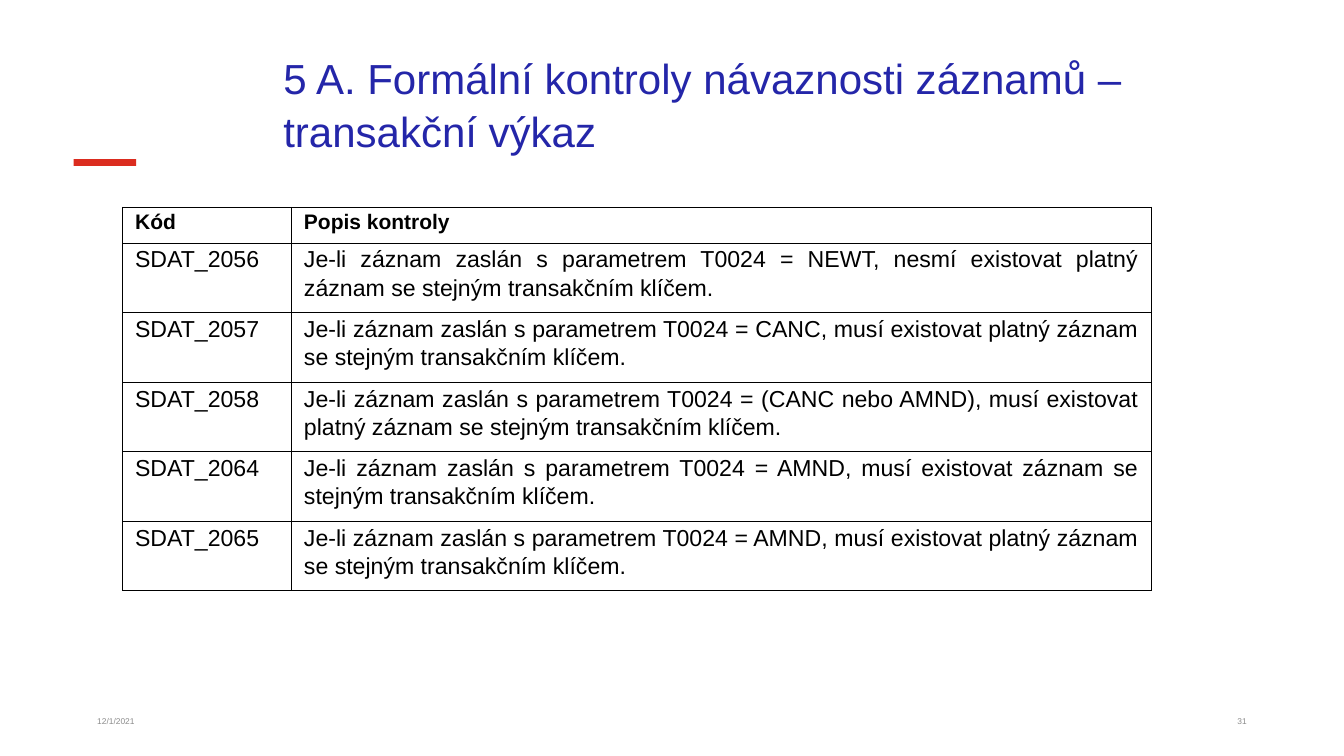
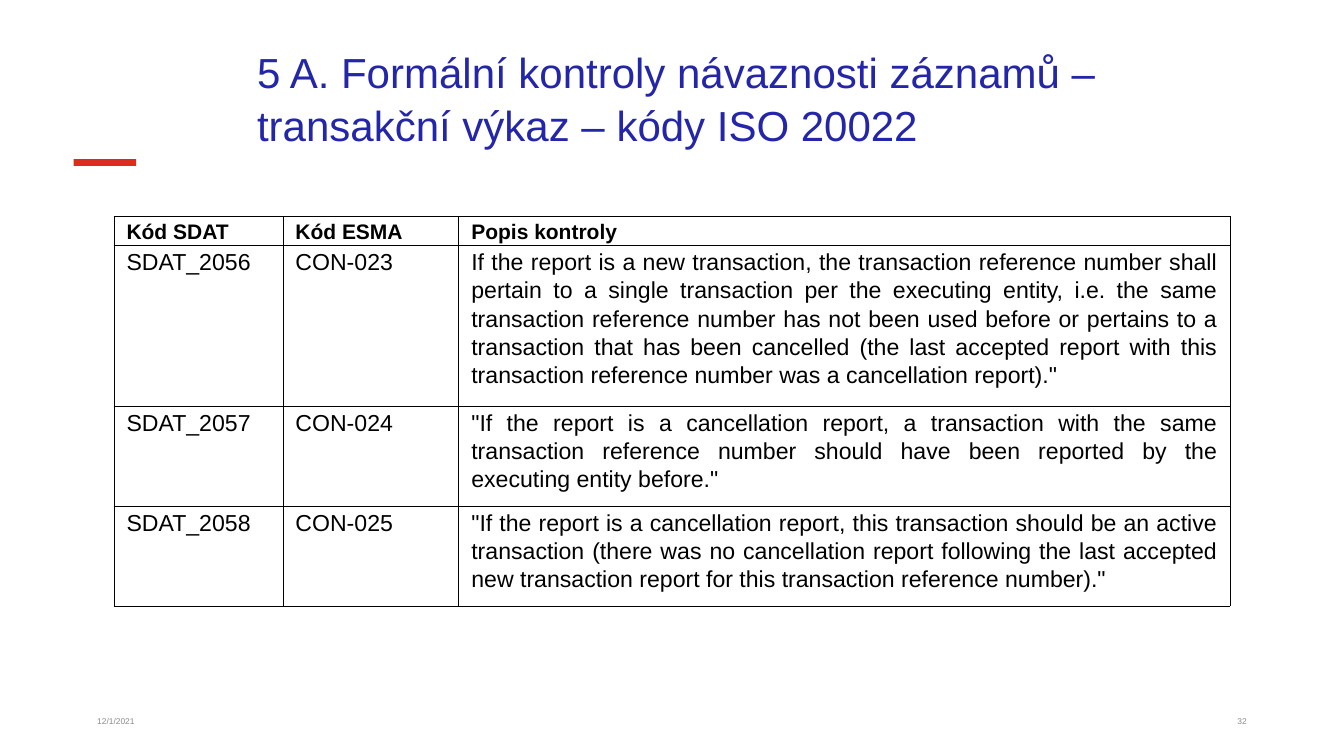
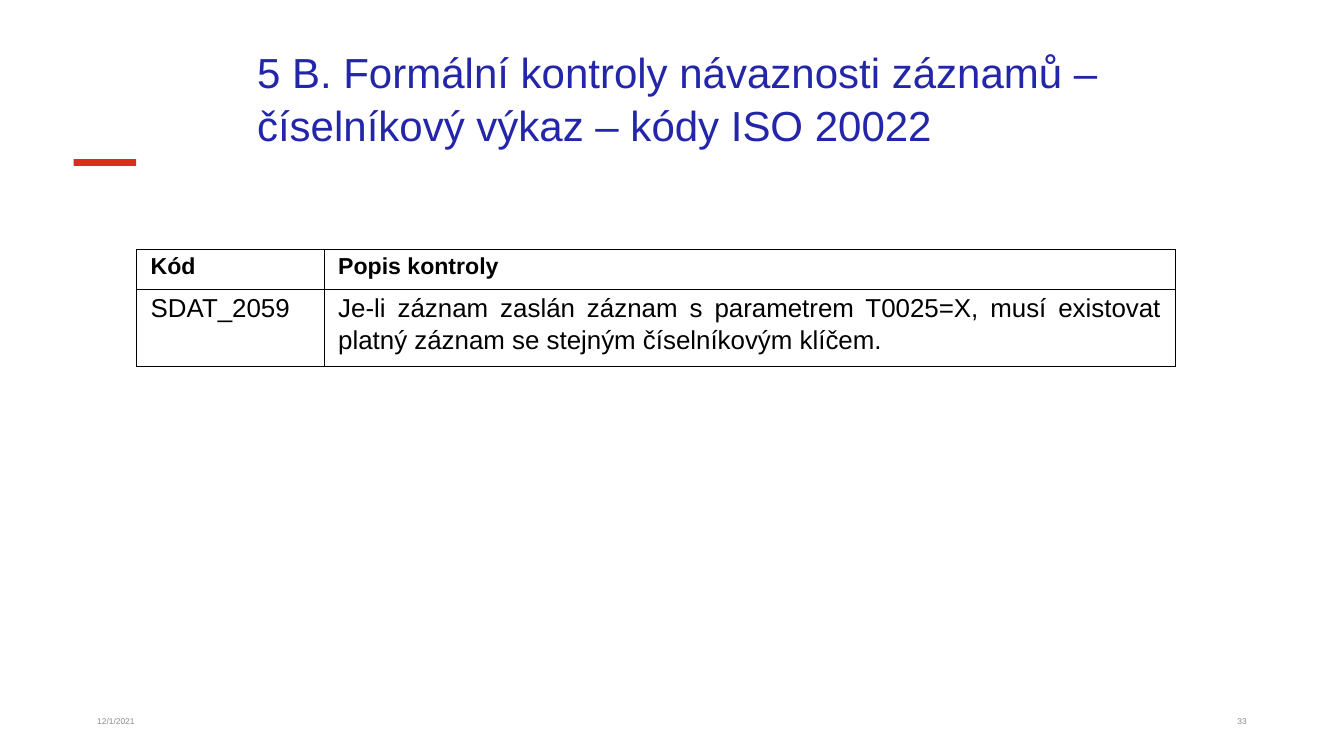
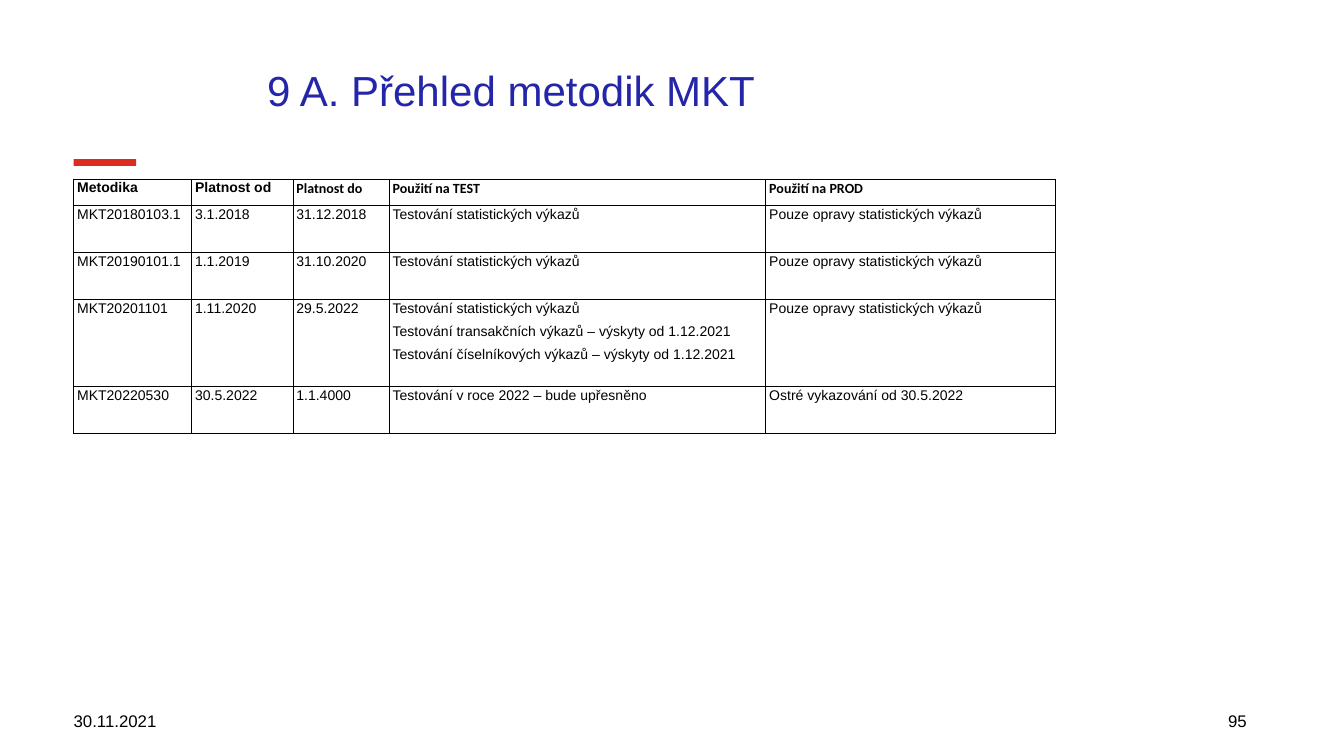
from lxml.etree import SubElement
from pptx import Presentation
from pptx.dml.color import RGBColor
from pptx.enum.shapes import MSO_SHAPE
from pptx.enum.text import MSO_ANCHOR, PP_ALIGN
from pptx.oxml.ns import qn
from pptx.util import Inches, Pt

# Shared style
SLIDE_WIDTH, SLIDE_HEIGHT = 26.66, 15
BLUE, RED, GRAY, BLACK = "2426A9", "DB2C1F", "8C8C8C", "000000"
FONT = "Arial"
TITLE_SIZE, TITLE_WIDTH, TITLE_HEIGHT = 60, 21.04, 2.02
ACCENT_BAR = (1.46, 3.16, 1.24, 0.13)
FOOTER_TOP, FOOTER_WIDTH, FOOTER_HEIGHT = 13.9, 6, 0.8
NUMBER_LEFT = 18.83
DEFAULT_MARGINS = (0.1, 0.05, 0.1, 0.05)
NO_MARGINS = (0, 0, 0, 0)

# Footer styles: left edge of the date, its margins, text size, colour, space after
SMALL_FOOTER = dict(left=1.83, margins=DEFAULT_MARGINS, size=12, color=GRAY, after=6)
LARGE_FOOTER = dict(left=1.46, margins=NO_MARGINS, size=24, color=BLACK, after=0)

# Table styles: text sizes, cell margins, header alignment, spacing and fonts
CODE_TABLE = dict(header_size=30, body_size=33, margins=(0.25, 0.03, 0.25, 0),
                  header_align=PP_ALIGN.JUSTIFY, header_spacing=1.1, header_fonts=[FONT] * 3)
LARGE_CODE_TABLE = CODE_TABLE | dict(header_size=33, body_size=37,
                                     margins=(0.28, 0.04, 0.28, 0))
METHOD_TABLE = dict(header_size=20, body_size=20, margins=(0.07, 0, 0.07, 0),
                    header_align=PP_ALIGN.LEFT, header_spacing=1.07,
                    header_fonts=[FONT] * 2 + ["Calibri"] * 3)

# Content: a list inside a row is a cell with several paragraphs
CORRECTIONS = "Pouze opravy statistických výkazů"
STATISTICS = "Testování statistických výkazů"

PAGES = [
    dict(
        title=["5 A. Formální kontroly návaznosti záznamů –", "transakční výkaz"],
        title_at=(5.62, 0.99), date="12/1/2021", number=31, footer=SMALL_FOOTER,
        style=CODE_TABLE, table_at=(2.43, 4.11),
        columns=[3.35, 17.05], heights=[0.71] + [1.38] * 5,
        rows=[
            ["Kód", "Popis kontroly"],
            ["SDAT_2056", "Je-li záznam zaslán s parametrem T0024 = NEWT, nesmí existovat "
                          "platný záznam se stejným transakčním klíčem."],
            ["SDAT_2057", "Je-li záznam zaslán s parametrem T0024 = CANC, musí existovat "
                          "platný záznam se stejným transakčním klíčem."],
            ["SDAT_2058", "Je-li záznam zaslán s parametrem T0024 = (CANC nebo AMND), musí "
                          "existovat platný záznam se stejným transakčním klíčem."],
            ["SDAT_2064", "Je-li záznam zaslán s parametrem T0024 = AMND, musí existovat "
                          "záznam se stejným transakčním klíčem."],
            ["SDAT_2065", "Je-li záznam zaslán s parametrem T0024 = AMND, musí existovat "
                          "platný záznam se stejným transakčním klíčem."],
        ],
    ),
    dict(
        title=["5 A. Formální kontroly návaznosti záznamů –",
               "transakční výkaz – kódy ISO 20022"],
        title_at=(5.1, 0.87), date="12/1/2021", number=32, footer=SMALL_FOOTER,
        style=CODE_TABLE, table_at=(2.26, 4.29),
        columns=[3.35, 3.49, 15.3], heights=[0.56, 3.19, 1.98, 1.98],
        rows=[
            ["Kód SDAT", "Kód ESMA", "Popis kontroly"],
            ["SDAT_2056", "CON-023",
             "If the report is a new transaction, the transaction reference number shall "
             "pertain to a single transaction per the executing entity, i.e. the same "
             "transaction reference number has not been used before or pertains to a "
             "transaction that has been cancelled (the last accepted report with this "
             'transaction reference number was a cancellation report)."'],
            ["SDAT_2057", "CON-024",
             '"If the report is a cancellation report, a transaction with the same '
             "transaction reference number should have been reported by the executing "
             'entity before."'],
            ["SDAT_2058", "CON-025",
             '"If the report is a cancellation report, this transaction should be an active '
             "transaction (there was no cancellation report following the last accepted "
             'new transaction report for this transaction reference number)."'],
        ],
    ),
    dict(
        title=["5 B. Formální kontroly návaznosti záznamů –",
               "číselníkový výkaz – kódy ISO 20022"],
        title_at=(5.1, 0.87), date="12/1/2021", number=33, footer=SMALL_FOOTER,
        style=LARGE_CODE_TABLE, table_at=(2.71, 4.95),
        columns=[3.72, 16.88], heights=[0.79, 1.53],
        rows=[
            ["Kód", "Popis kontroly"],
            ["SDAT_2059", "Je-li záznam zaslán záznam s parametrem T0025=X, musí existovat "
                          "platný záznam se stejným číselníkovým klíčem."],
        ],
    ),
    dict(
        title=["9 A. Přehled metodik MKT"],
        title_at=(5.3, 1.23), date="30.11.2021", number=95, footer=LARGE_FOOTER,
        style=METHOD_TABLE, table_at=(1.46, 3.55),
        columns=[2.34, 2.01, 1.91, 7.47, 5.75], heights=[0.53, 0.93, 0.93, 1.72, 0.93],
        rows=[
            ["Metodika", "Platnost od", "Platnost do", "Použití na TEST", "Použití na PROD"],
            ["MKT20180103.1", "3.1.2018", "31.12.2018", STATISTICS, CORRECTIONS],
            ["MKT20190101.1", "1.1.2019", "31.10.2020", STATISTICS, CORRECTIONS],
            ["MKT20201101", "1.11.2020", "29.5.2022",
             [STATISTICS,
              "Testování transakčních výkazů – výskyty od 1.12.2021",
              "Testování číselníkových výkazů – výskyty od 1.12.2021"],
             CORRECTIONS],
            ["MKT20220530", "30.5.2022", "1.1.4000",
             "Testování v roce 2022 – bude upřesněno", "Ostré vykazování od 30.5.2022"],
        ],
    ),
]


# Helpers
def rgb(hex_color):
    return RGBColor.from_string(hex_color)


def set_margins(target, margins):
    """Set left, top, right and bottom margins of a text frame or a cell."""
    for side, margin in zip(("left", "top", "right", "bottom"), margins):
        setattr(target, f"margin_{side}", Inches(margin))


def style_paragraph(paragraph, size, color=BLACK, font=FONT, bold=False,
                    align=PP_ALIGN.LEFT, spacing=1.0, after=0):
    paragraph.alignment = align
    paragraph.line_spacing = spacing
    paragraph.space_after = Pt(after)
    paragraph.font.size = Pt(size)
    paragraph.font.name = font
    paragraph.font.bold = bold
    paragraph.font.color.rgb = rgb(color)


def add_text(slide, box, text, margins, anchor, **style):
    frame = slide.shapes.add_textbox(*map(Inches, box)).text_frame
    frame.word_wrap = True
    frame.vertical_anchor = anchor
    set_margins(frame, margins)
    paragraph = frame.paragraphs[0]
    paragraph.text = text
    style_paragraph(paragraph, **style)


def add_borders(cell):
    properties = cell._tc.get_or_add_tcPr()
    for position, side in enumerate(("a:lnL", "a:lnR", "a:lnT", "a:lnB")):
        line = SubElement(properties, qn(side), w=str(Pt(1)))
        fill = SubElement(line, qn("a:solidFill"))
        SubElement(fill, qn("a:srgbClr"), val=BLACK)
        properties.insert(position, line)


# Slide parts
def add_title(slide, page):
    add_text(slide, (*page["title_at"], TITLE_WIDTH, TITLE_HEIGHT), "\v".join(page["title"]),
             NO_MARGINS, MSO_ANCHOR.TOP, size=TITLE_SIZE, color=BLUE, spacing=1.05)


def add_accent_bar(slide):
    bar = slide.shapes.add_shape(MSO_SHAPE.RECTANGLE, *map(Inches, ACCENT_BAR))
    bar.shadow.inherit = False
    bar.fill.solid()
    bar.fill.fore_color.rgb = rgb(RED)
    bar.line.fill.background()


def add_footer(slide, page):
    footer = page["footer"]
    parts = [(footer["left"], page["date"], footer["margins"], PP_ALIGN.LEFT),
             (NUMBER_LEFT, str(page["number"]), DEFAULT_MARGINS, PP_ALIGN.RIGHT)]
    for left, text, margins, align in parts:
        add_text(slide, (left, FOOTER_TOP, FOOTER_WIDTH, FOOTER_HEIGHT), text, margins,
                 MSO_ANCHOR.MIDDLE, align=align, size=footer["size"],
                 color=footer["color"], after=footer["after"])


def fill_cell(cell, content, style, is_header, column):
    paragraphs = content if isinstance(content, list) else [content]
    set_margins(cell, style["margins"])
    cell.fill.background()
    add_borders(cell)
    cell.text = "\n".join(paragraphs)
    for index, paragraph in enumerate(cell.text_frame.paragraphs):
        if is_header:
            style_paragraph(paragraph, style["header_size"], bold=True,
                            font=style["header_fonts"][column],
                            align=style["header_align"], spacing=style["header_spacing"])
        else:
            style_paragraph(paragraph, style["body_size"], align=PP_ALIGN.JUSTIFY,
                            spacing=1.1, after=6)
        if index:
            paragraph.space_before = Pt(2)


def add_page_table(slide, page):
    rows, columns, heights = page["rows"], page["columns"], page["heights"]
    box = (*page["table_at"], sum(columns), sum(heights))
    table = slide.shapes.add_table(len(rows), len(columns), *map(Inches, box)).table
    table.first_row = table.horz_banding = False
    for column, width in zip(table.columns, columns):
        column.width = Inches(width)
    for row, height in zip(table.rows, heights):
        row.height = Inches(height)
    for row_index, row in enumerate(rows):
        for column_index, content in enumerate(row):
            fill_cell(table.cell(row_index, column_index), content, page["style"],
                      row_index == 0, column_index)


def main():
    presentation = Presentation()
    presentation.slide_width = Inches(SLIDE_WIDTH)
    presentation.slide_height = Inches(SLIDE_HEIGHT)
    for page in PAGES:
        slide = presentation.slides.add_slide(presentation.slide_layouts[6])
        add_accent_bar(slide)
        add_footer(slide, page)
        add_page_table(slide, page)
        add_title(slide, page)
    presentation.save("out.pptx")


if __name__ == "__main__":
    main()
